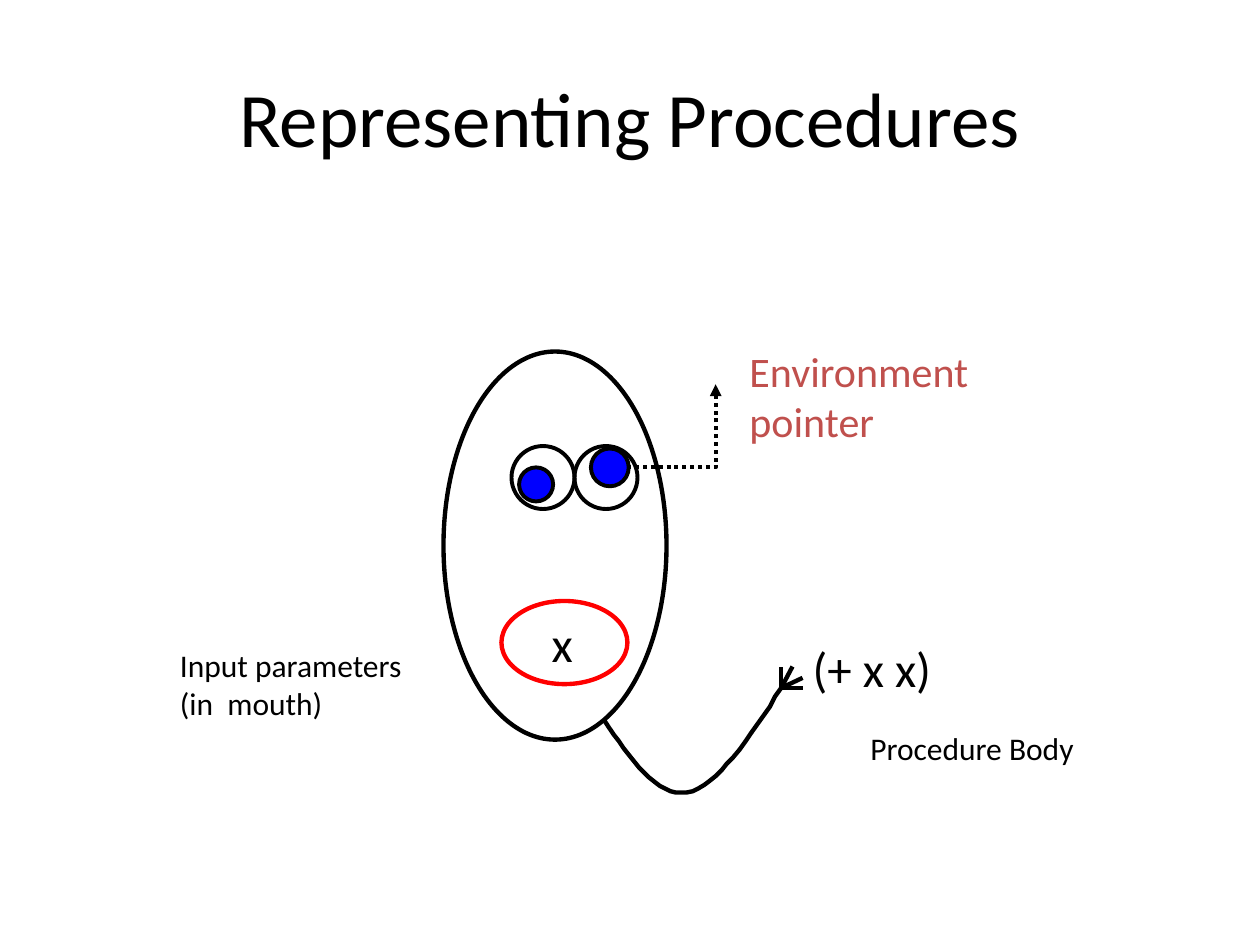
from dataclasses import dataclass
from typing import Optional

from lxml.etree import SubElement
from pptx import Presentation
from pptx.dml.color import RGBColor
from pptx.enum.dml import MSO_LINE
from pptx.enum.shapes import MSO_CONNECTOR, MSO_SHAPE
from pptx.enum.text import MSO_ANCHOR, MSO_AUTO_SIZE, PP_ALIGN
from pptx.oxml.ns import qn
from pptx.util import Emu, Pt

PX = 9144
COLORS = {"ink": "000000", "pupil": "0000FF", "mouth": "FF0000", "pointer": "C0504D"}
Point = tuple[int, int]


@dataclass(frozen=True)
class Oval:
    left: int
    top: int
    width: int
    height: int
    weight: float = 2.25
    line: str = "ink"
    fill: Optional[str] = None


@dataclass(frozen=True)
class Label:
    paragraphs: tuple[str, ...]
    left: int
    top: int
    width: int
    height: int
    size: int
    color: str = "ink"


EYES = [Oval(left, 354, 50, 50) for left in (406, 456)]
RIGHT_PUPIL = Oval(469, 356, 30, 30, fill="pupil")
LEFT_PUPIL = Oval(412, 371, 27, 27, fill="pupil")
HEAD = Oval(352, 279, 177, 308, weight=2.5)
MOUTH = Oval(398, 477, 100, 66, weight=2.5, line="mouth")
LABELS = [
    Label(("Environment\npointer",), 585, 269, 196, 91, 24, "pointer"),
    Label(("x",), 428, 482, 39, 57, 28),
    Label(("(+ x x)",), 635, 502, 141, 57, 28),
    Label(("Input parameters", "(in  mouth)"), 133, 508, 198, 71, 18),
    Label(("Procedure Body",), 681, 574, 183, 40, 18),
]
GAZE = [(498, 371), (568, 371), (568, 305)]
HAND = (620, 546)
FINGERTIPS = [(620, 529), (637, 546), (637, 538), (629, 529)]
ARM_CURVES = [
    [(479, 571), (500, 602), (522, 633), (545, 629)],
    [(545, 629), (569, 625), (595, 585), HAND],
]
CURVE_STEPS = 16


def px(length: int) -> Emu:
    return Emu(length * PX)


def rgb(name: str) -> RGBColor:
    return RGBColor.from_string(COLORS[name])


def write(frame, paragraphs, *, size: int, color: str = "ink", align=PP_ALIGN.LEFT) -> None:
    for index, wording in enumerate(paragraphs):
        paragraph = frame.add_paragraph() if index else frame.paragraphs[0]
        paragraph.text = wording
        paragraph.alignment = align
        for run in paragraph.runs:
            run.font.name = "Calibri"
            run.font.size = Pt(size)
            run.font.color.rgb = rgb(color)


def outline(part, color: str, weight: float) -> None:
    part.line.color.rgb = rgb(color)
    part.line.width = Pt(weight)


def draw_oval(shapes, oval: Oval) -> None:
    ellipse = shapes.add_shape(
        MSO_SHAPE.OVAL, px(oval.left), px(oval.top), px(oval.width), px(oval.height)
    )
    ellipse.shadow.inherit = False
    if oval.fill:
        ellipse.fill.solid()
        ellipse.fill.fore_color.rgb = rgb(oval.fill)
    else:
        ellipse.fill.background()
    outline(ellipse, oval.line, oval.weight)


def draw_label(shapes, label: Label) -> None:
    frame = shapes.add_textbox(
        px(label.left), px(label.top), px(label.width), px(label.height)
    ).text_frame
    frame.word_wrap = False
    frame.auto_size = MSO_AUTO_SIZE.SHAPE_TO_FIT_TEXT
    write(frame, label.paragraphs, size=label.size, color=label.color)


def draw_open_path(shapes, points, weight: float):
    builder = shapes.build_freeform(*points[0], scale=PX)
    builder.add_line_segments(points[1:], close=False)
    stroke = builder.convert_to_shape()
    stroke.shadow.inherit = False
    stroke.fill.background()
    outline(stroke, "ink", weight)
    return stroke


def draw_gaze(shapes) -> None:
    gaze = draw_open_path(shapes, GAZE, 2.25)
    gaze.line.dash_style = MSO_LINE.ROUND_DOT
    SubElement(gaze.line._get_or_add_ln(), qn("a:tailEnd"), type="triangle")


def bezier(controls: list[Point], t: float) -> tuple[float, float]:
    weights = ((1 - t) ** 3, 3 * t * (1 - t) ** 2, 3 * t**2 * (1 - t), t**3)
    x, y = (sum(w * c for w, c in zip(weights, axis)) for axis in zip(*controls))
    return x, y


def draw_arm(shapes) -> None:
    points = [ARM_CURVES[0][0]] + [
        bezier(curve, step / CURVE_STEPS)
        for curve in ARM_CURVES
        for step in range(1, CURVE_STEPS + 1)
    ]
    draw_open_path(shapes, points, 2.5)


def draw_finger(shapes, tip: Point) -> None:
    finger = shapes.add_connector(
        MSO_CONNECTOR.STRAIGHT, *(px(value) for value in HAND + tip)
    )
    outline(finger, "ink", 2.5)
    SubElement(finger._element.spPr, qn("a:effectLst"))


def main() -> None:
    deck = Presentation()
    deck.slide_width, deck.slide_height = px(1000), px(750)
    slide = deck.slides.add_slide(deck.slide_layouts[5])
    shapes = slide.shapes

    title = shapes.title
    title.left, title.top, title.width, title.height = map(px, (50, 30, 900, 125))
    title.text_frame.vertical_anchor = MSO_ANCHOR.MIDDLE
    write(title.text_frame, ("Representing Procedures",), size=44, align=PP_ALIGN.CENTER)

    eyes = shapes.add_group_shape()
    for eye in EYES:
        draw_oval(eyes.shapes, eye)
    draw_oval(shapes, RIGHT_PUPIL)
    draw_gaze(shapes)
    for oval in (LEFT_PUPIL, HEAD, MOUTH):
        draw_oval(shapes, oval)
    draw_arm(shapes)
    for tip in FINGERTIPS:
        draw_finger(shapes, tip)
    for label in LABELS:
        draw_label(shapes, label)

    deck.save("out.pptx")


if __name__ == "__main__":
    main()
